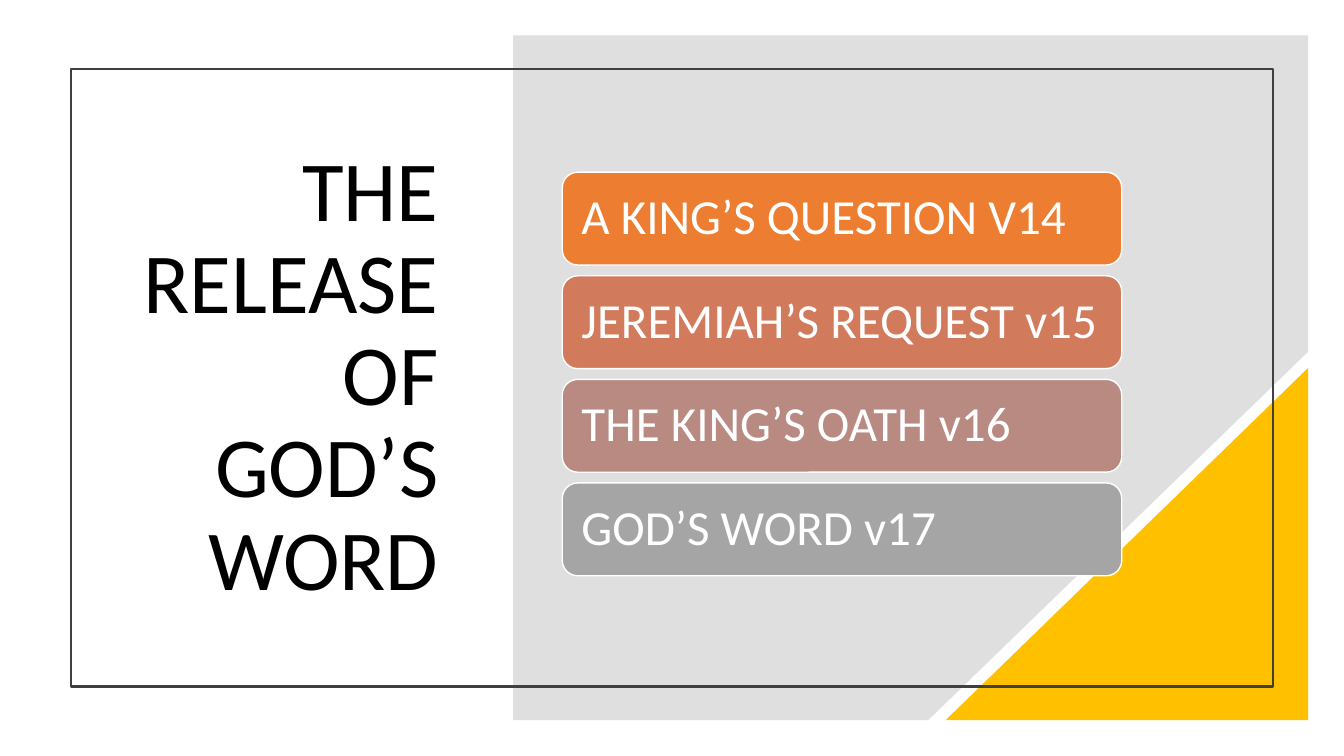
from dataclasses import dataclass

import pptx
import pptx.dml.color
import pptx.enum.shapes
import pptx.enum.text
import pptx.oxml
import pptx.oxml.ns
import pptx.util

Cm = pptx.util.Cm
Pt = pptx.util.Pt
Kind = pptx.enum.shapes.MSO_SHAPE
Align = pptx.enum.text.PP_ALIGN


@dataclass(frozen=True)
class Theme:
    """Colours, type sizes and font of the slide."""
    font: str = "Calibri"
    title: int = 61
    item: int = 35
    black: str = "000000"
    white: str = "FFFFFF"
    panel: str = "808080"
    gold: str = "FFC000"
    frame: str = "404040"
    bars: tuple = ("ED7D31", "D17B5C", "B98A82", "A5A5A5")


THEME = Theme()
ITEMS = (
    "A KING’S QUESTION V14",
    "JEREMIAH’S REQUEST v15",
    "THE KING’S OATH v16",
    "GOD’S WORD v17",
)


def rgb(code):
    """Turn a hex code into a colour."""
    return pptx.dml.color.RGBColor.from_string(code)


def paint(shape, fill=None, line=None, width=1):
    """Set fill and line, leaving out whichever is not given."""
    shape.shadow.inherit = False
    if fill:
        shape.fill.solid()
        shape.fill.fore_color.rgb = rgb(fill)
    else:
        shape.fill.background()
    if line:
        shape.line.color.rgb = rgb(line)
        shape.line.width = Pt(width)
    else:
        shape.line.fill.background()


def write(shape, text, size, color, align):
    """Put one wrapped, vertically centred paragraph in a shape."""
    frame = shape.text_frame
    frame.word_wrap = True
    frame.vertical_anchor = pptx.enum.text.MSO_ANCHOR.MIDDLE
    frame.text = text
    para = frame.paragraphs[0]
    para.alignment = align
    para.line_spacing = 0.9
    font = para.runs[0].font
    font.name, font.size = THEME.font, Pt(size)
    font.color.rgb = rgb(color)


def add_title(slide, text):
    """Add the large title, aligned right."""
    box = slide.shapes.add_textbox(Cm(2.79), Cm(3.3), Cm(8.51), Cm(12.45))
    write(box, text, THEME.title, THEME.black, Align.RIGHT)


def add_panel(slide):
    """Add the see-through panel with its cut corner."""
    left, top, right, base = Cm(12.93), Cm(0.89), Cm(32.97), Cm(18.15)
    pen = slide.shapes.build_freeform(left, top)
    pen.add_line_segments(
        [(right, top), (right, Cm(8.86)), (Cm(23.39), base), (left, base)])
    panel = pen.convert_to_shape()
    paint(panel, THEME.panel)
    tint = panel._element.spPr.find(".//" + pptx.oxml.ns.qn("a:srgbClr"))
    tint.append(pptx.oxml.parse_xml(
        f'<a:alpha {pptx.oxml.ns.nsdecls("a")} val="25000"/>'))


def add_corner(slide):
    """Add the gold triangle in the lower right corner."""
    corner = slide.shapes.add_shape(
        Kind.RIGHT_TRIANGLE, Cm(23.83), Cm(9.27), Cm(9.14), Cm(8.88))
    paint(corner, THEME.gold)
    corner._element.spPr.find(pptx.oxml.ns.qn("a:xfrm")).set("flipH", "1")


def add_frame(slide):
    """Add the thin outline around the content."""
    frame = slide.shapes.add_shape(
        Kind.RECTANGLE, Cm(1.78), Cm(1.73), Cm(30.3), Cm(15.57))
    paint(frame, line=THEME.frame, width=1.5)


def add_bar(slide, top, text, fill):
    """Add one rounded bar with its label."""
    bar = slide.shapes.add_shape(
        Kind.ROUNDED_RECTANGLE, Cm(14.17), Cm(top), Cm(14.1), Cm(2.34))
    paint(bar, fill, THEME.white)
    write(bar, text, THEME.item, THEME.white, Align.LEFT)
    frame = bar.text_frame
    frame.margin_left, frame.margin_right = Cm(0.37), Cm(0.3)


def main():
    """Build the slide and save it."""
    deck = pptx.Presentation()
    deck.slide_width, deck.slide_height = Cm(33.87), Cm(19.05)
    slide = deck.slides.add_slide(deck.slide_layouts[6])
    add_title(slide, "THE RELEASE OF GOD’S WORD")
    add_panel(slide)
    add_corner(slide)
    add_frame(slide)
    for i, (text, fill) in enumerate(zip(ITEMS, THEME.bars)):
        add_bar(slide, 4.34 + 2.61 * i, text, fill)
    deck.save("out.pptx")


if __name__ == "__main__":
    main()
